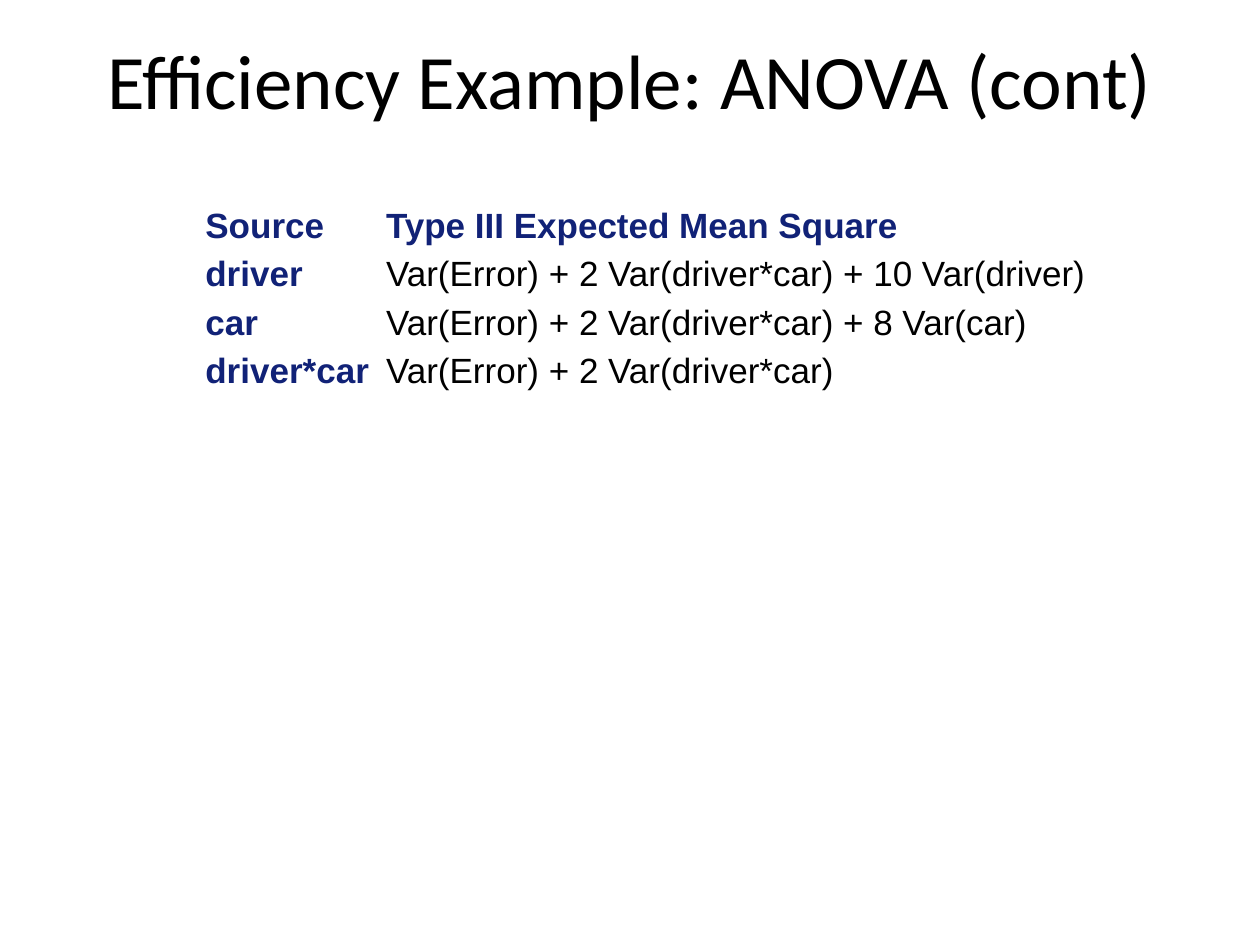
import pptx
import pptx.util
import pptx.dml.color
import pptx.enum.text

Inches, Pt = pptx.util.Inches, pptx.util.Pt
MIDDLE = pptx.enum.text.MSO_ANCHOR.MIDDLE
WIDTH, HEIGHT = 10, 7.5
BLACK, NAVY = "000000", "112277"

ROWS = [
    ("Source", "Type III Expected Mean Square"),
    ("driver", "Var(Error) + 2 Var(driver*car) + 10 Var(driver)"),
    ("car", "Var(Error) + 2 Var(driver*car) + 8 Var(car)"),
    ("driver*car", "Var(Error) + 2 Var(driver*car)"),
]


def color(value):
    return pptx.dml.color.RGBColor.from_string(value)


def add_span(para, text, font, size, value, bold=False):
    span = para.add_run()
    span.text = text
    span.font.name = font
    span.font.size = Pt(size)
    span.font.bold = bold
    span.font.color.rgb = color(value)


def add_title(page, box, text):
    frame = page.shapes.add_textbox(*map(Inches, box)).text_frame
    frame.word_wrap = True
    frame.vertical_anchor = MIDDLE
    para = frame.paragraphs[0]
    para.alignment = pptx.enum.text.PP_ALIGN.CENTER
    add_span(para, text, "Calibri", 44, BLACK)


def add_mean_squares(page, box, rows, shares):
    shape = page.shapes.add_table(len(rows), len(shares), *map(Inches, box))
    table = shape.table
    table.first_row = table.horz_banding = False
    for column, share in zip(table.columns, shares):
        column.width = Inches(box[2] * share)
    for r, texts in enumerate(rows):
        # Each row grows to the height of its text
        table.rows[r].height = 0
        for c, text in enumerate(texts):
            cell = table.cell(r, c)
            cell.fill.background()
            cell.vertical_anchor = MIDDLE
            cell.margin_left = cell.margin_right = Inches(0.05)
            cell.margin_top = cell.margin_bottom = 0
            para = cell.text_frame.paragraphs[0]
            para.line_spacing = 1.15
            para.space_after = Pt(5)
            # Header row and source column share one style
            heading = r == 0 or c == 0
            add_span(para, text, "Arial", 20, NAVY if heading else BLACK, heading)


def main():
    deck = pptx.Presentation()
    deck.slide_width, deck.slide_height = Inches(WIDTH), Inches(HEIGHT)
    page = deck.slides.add_slide(deck.slide_layouts[6])
    # Title band across the top sixth
    add_title(page, (0.05 * WIDTH, 0, 0.9 * WIDTH, HEIGHT / 6),
              "Efficiency Example: ANOVA (cont)")
    # Expected mean squares
    add_mean_squares(page, (1.58, 1.58, 7.17, 1.53), ROWS, (0.2, 0.8))
    deck.save("out.pptx")


if __name__ == "__main__":
    main()
